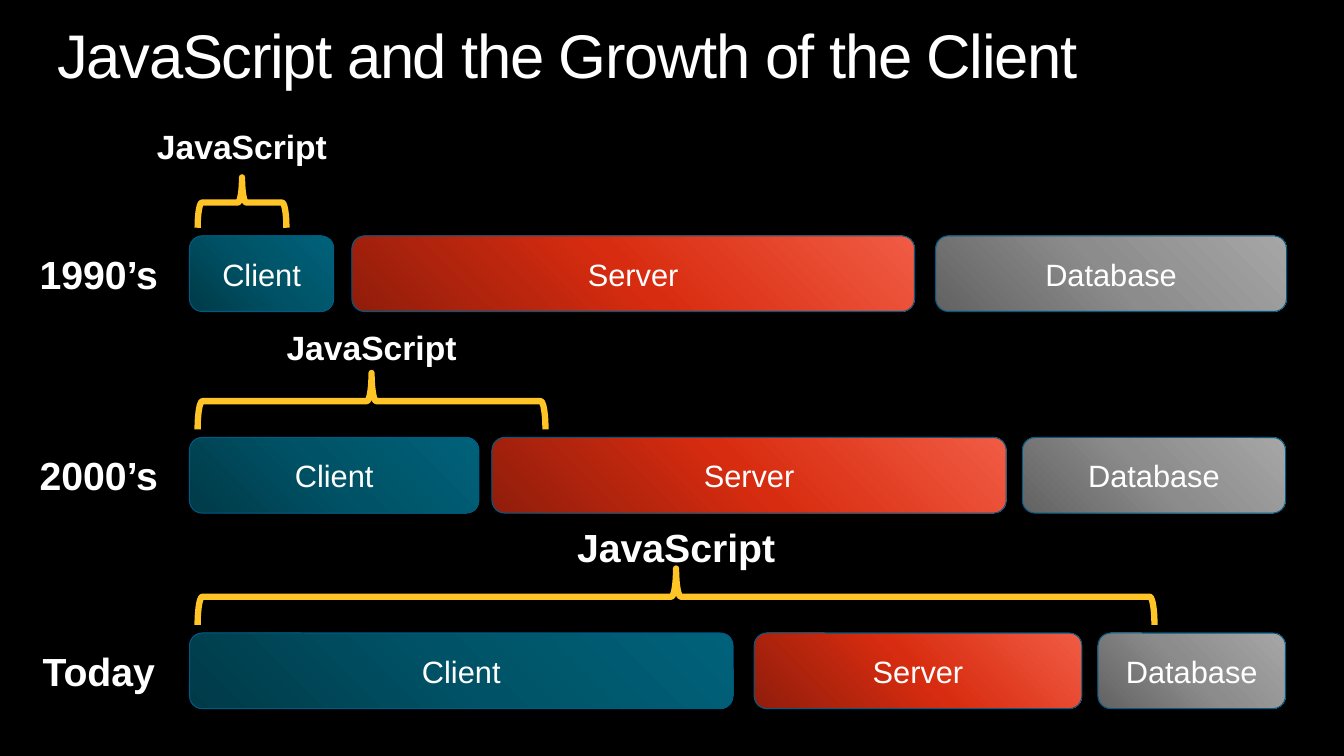
from copy import deepcopy
from dataclasses import dataclass

from pptx import Presentation
from pptx.dml.color import RGBColor
from pptx.enum.shapes import MSO_SHAPE as Preset
from pptx.enum.text import MSO_ANCHOR as Anchor, MSO_AUTO_SIZE as AutoSize, PP_ALIGN as Align
from pptx.oxml.ns import qn
from pptx.shapes.autoshape import Shape
from pptx.slide import Slide
from pptx.text.text import TextFrame
from pptx.util import Inches, Pt

COLORS = {"background": "000000", "text": "FFFFFF", "outline": "005A84", "brace": "FFC425"}
# Dark, middle and light gradient colours of each tier
TIERS = {
    "Client": ("003A48", "005367", "00627A"),
    "Server": ("901D0B", "D82C10", "F15C44"),
    "Database": ("626262", "8C8C8C", "A6A6A6"),
}
TIER_HEIGHT = 0.75
BRACE_LEFT = 1.96
BRACE_GAP = 0.08
ERA_WIDTH = 1.96
ERA_DROP = 0.14


@dataclass
class Era:
    name: str
    top: float
    tier_spans: list[tuple[float, float]]  # left and width of each tier
    brace_span: float
    brace_depth: float
    label_top: float
    label_width: float
    label_size: int


ERAS = [
    Era("1990’s", 2.34, [(1.88, 1.43), (3.49, 5.58), (9.28, 3.48)], 0.88, 0.5, 1.25, 1.87, 24),
    Era("2000’s", 4.34, [(1.88, 2.87), (4.88, 5.1), (10.14, 2.61)], 3.45, 0.56, 3.24, 2.39, 24),
    Era("Today", 6.28, [(1.88, 5.39), (7.48, 3.25), (10.89, 1.86)], 9.49, 0.56, 5.19, 2.39, 28),
]


def rgb(name: str) -> RGBColor:
    return RGBColor.from_string(COLORS[name])


def write(frame: TextFrame, text: str, size: int, bold: bool = False,
          align: Align = Align.CENTER) -> None:
    paragraph = frame.paragraphs[0]
    paragraph.alignment = align
    run = paragraph.add_run()
    run.text = text
    run.font.name = "Arial"
    run.font.size = Pt(size)
    run.font.bold = bold
    run.font.color.rgb = rgb("text")


def add_label(slide: Slide, left: float, top: float, width: float, height: float,
              text: str, size: int, bold: bool = True, align: Align = Align.CENTER) -> TextFrame:
    box = slide.shapes.add_textbox(Inches(left), Inches(top), Inches(width), Inches(height))
    frame = box.text_frame
    frame.word_wrap = True
    frame.auto_size = AutoSize.SHAPE_TO_FIT_TEXT
    frame.margin_left = frame.margin_top = frame.margin_right = frame.margin_bottom = 0
    write(frame, text, size, bold, align)
    return frame


def fill_gradient(shape: Shape, hues: tuple[str, ...]) -> None:
    shape.fill.gradient()
    shape.fill.gradient_angle = 45
    stop_list = shape.element.spPr.find(".//" + qn("a:gsLst"))
    stop_list.append(deepcopy(stop_list[-1]))
    for stop, hue, position in zip(shape.fill.gradient_stops, hues, (0, 0.5, 1)):
        stop.color.rgb = RGBColor.from_string(hue)
        stop.position = position


def add_tier(slide: Slide, name: str, left: float, top: float, width: float) -> None:
    tier = slide.shapes.add_shape(Preset.ROUNDED_RECTANGLE, Inches(left), Inches(top),
                                  Inches(width), Inches(TIER_HEIGHT))
    tier.shadow.inherit = False
    fill_gradient(tier, TIERS[name])
    tier.line.color.rgb = rgb("outline")
    tier.line.width = Pt(0.75)
    tier.text_frame.word_wrap = True
    tier.text_frame.vertical_anchor = Anchor.MIDDLE
    write(tier.text_frame, name, 22)


def add_brace(slide: Slide, center_x: float, center_y: float, span: float, depth: float) -> None:
    # Turned a quarter, so the span is the height before rotation
    brace = slide.shapes.add_shape(Preset.LEFT_BRACE, Inches(center_x - depth / 2),
                                   Inches(center_y - span / 2), Inches(depth), Inches(span))
    brace.rotation = 90
    brace.shadow.inherit = False
    brace.fill.background()
    brace.line.color.rgb = rgb("brace")
    brace.line.width = Pt(4.5)


def add_era(slide: Slide, era: Era) -> None:
    for name, (left, width) in zip(TIERS, era.tier_spans):
        add_tier(slide, name, left, era.top, width)
    center_x = BRACE_LEFT + era.brace_span / 2
    center_y = era.top - BRACE_GAP - era.brace_depth / 2
    add_brace(slide, center_x, center_y, era.brace_span, era.brace_depth)
    add_label(slide, center_x - era.label_width / 2, era.label_top, era.label_width,
              era.label_size / 60, "JavaScript", era.label_size)
    add_label(slide, 0, era.top + ERA_DROP, ERA_WIDTH, 0.47, era.name, 28)


def main() -> None:
    deck = Presentation()
    deck.slide_width, deck.slide_height = Inches(13.33), Inches(7.5)
    slide = deck.slides.add_slide(deck.slide_layouts[6])
    slide.background.fill.solid()
    slide.background.fill.fore_color.rgb = rgb("background")

    # Title, with slightly tightened letters
    title = add_label(slide, 0.57, 0.25, 12.19, 0.67, "JavaScript and the Growth of the Client",
                      44, bold=False, align=Align.LEFT).paragraphs[0]
    title.line_spacing = 0.9
    title.runs[0].font._element.set("spc", "-100")

    # One row per era
    for era in ERAS:
        add_era(slide, era)
    deck.save("out.pptx")


if __name__ == "__main__":
    main()
